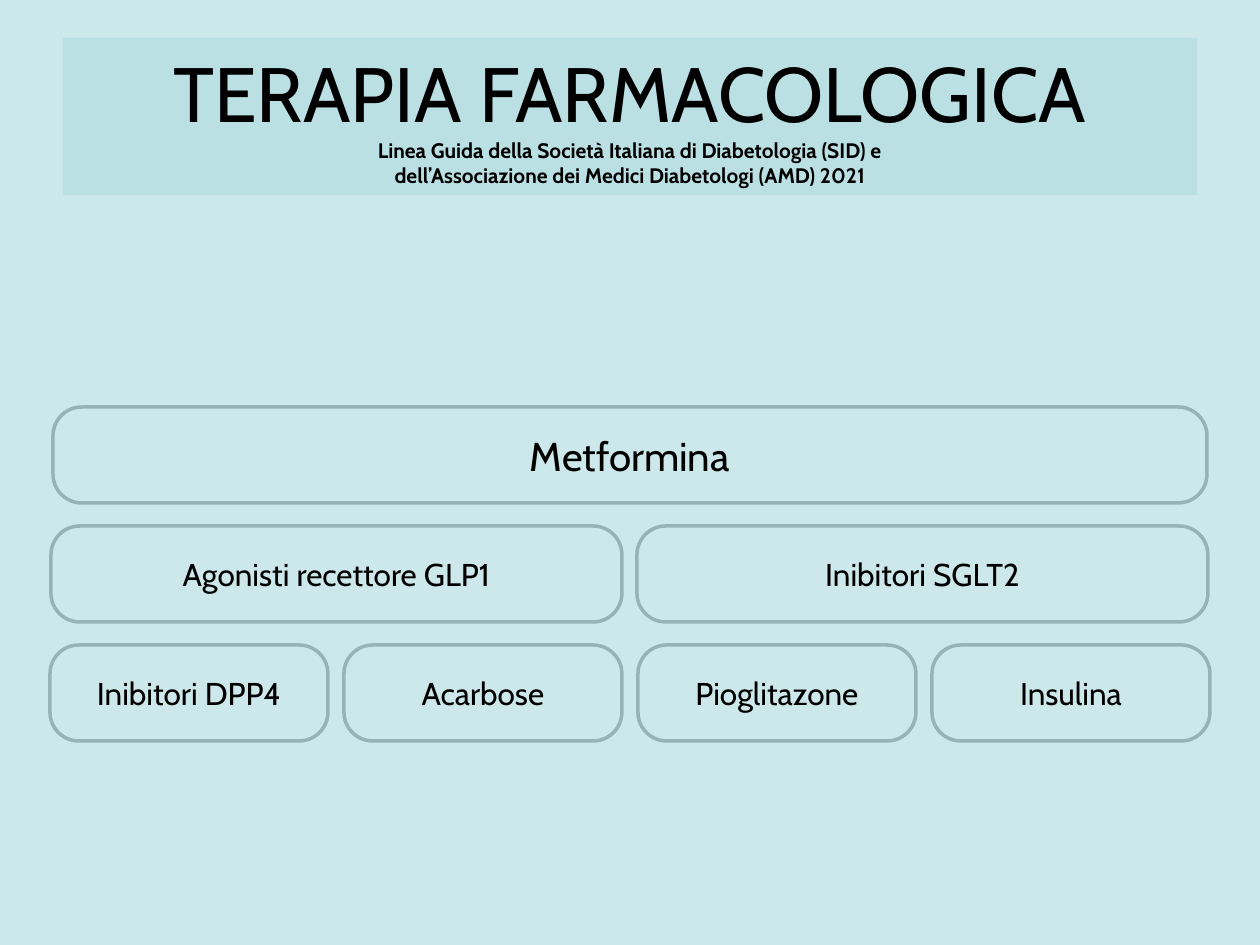
"""Build the drug therapy slide: a title band above three rows of rounded boxes."""
from copy import deepcopy

from pptx import Presentation
from pptx.dml.color import RGBColor
from pptx.enum.shapes import MSO_SHAPE
from pptx.enum.text import MSO_ANCHOR, PP_ALIGN
from pptx.util import Pt

TITLE = "TERAPIA FARMACOLOGICA"
SOURCE = [
    "Linea Guida della Società Italiana di Diabetologia (SID) e",
    "dell’Associazione dei Medici Diabetologi (AMD) 2021",
]
ROWS = [
    {"size": "first", "width": 1154, "gap": 0, "names": ["Metformina"]},
    {"size": "drug", "width": 571, "gap": 15,
     "names": ["Agonisti recettore GLP1", "Inibitori SGLT2"]},
    {"size": "drug", "width": 278, "gap": 16,
     "names": ["Inibitori DPP4", "Acarbose", "Pioglitazone", "Insulina"]},
]
THEME = {
    "font": "Cabin",
    "background": RGBColor.from_string("CCE8EA"),
    "band": RGBColor.from_string("BBE0E3"),
    "outline": RGBColor.from_string("96B3B6"),
    "text": RGBColor.from_string("000000"),
    "sizes": {"title": Pt(44), "source": Pt(12), "first": Pt(23), "drug": Pt(18)},
    "line": Pt(2),
}
PX = 914400 // 126
SLIDE_W, SLIDE_H = 1260, 945
BAND = (63, 38, 1134, 157)
ROW_TOP, ROW_PITCH, ROW_H = 407, 119, 96
CORNER = 0.3
INSET = 6


def add_box(s, kind, box, lines):
    sp = s.shapes.add_shape(kind, *(v * PX for v in box))
    sp.shadow.inherit = False
    tf = sp.text_frame
    frame = {"word_wrap": True, "vertical_anchor": MSO_ANCHOR.MIDDLE}
    frame.update({f"margin_{side}": INSET * PX
                  for side in ("left", "top", "right", "bottom")})
    for name, value in frame.items():
        setattr(tf, name, value)
    p = tf.paragraphs[0]
    p.alignment = PP_ALIGN.CENTER
    for i, (text, size, bold) in enumerate(lines):
        if i:
            p.add_line_break()
            p._p[-1].append(deepcopy(r._r.rPr))
        r = p.add_run()
        r.text = text
        font = {"name": THEME["font"], "size": THEME["sizes"][size], "bold": bold}
        for name, value in font.items():
            setattr(r.font, name, value)
        r.font.color.rgb = THEME["text"]
    return sp


def add_title(s):
    lines = [(TITLE, "title", False)] + [(text, "source", True) for text in SOURCE]
    sp = add_box(s, MSO_SHAPE.RECTANGLE, BAND, lines)
    sp.fill.solid()
    sp.fill.fore_color.rgb = THEME["band"]
    sp.line.fill.background()


def add_row(s, top, row):
    pitch = row["width"] + row["gap"]
    left = (SLIDE_W - pitch * len(row["names"]) + row["gap"]) // 2
    for i, name in enumerate(row["names"]):
        box = (left + i * pitch, top, row["width"], ROW_H)
        sp = add_box(s, MSO_SHAPE.ROUNDED_RECTANGLE, box, [(name, row["size"], False)])
        sp.adjustments[0] = CORNER
        sp.fill.background()
        sp.line.color.rgb = THEME["outline"]
        sp.line.width = THEME["line"]


def main():
    prs = Presentation()
    prs.slide_width, prs.slide_height = SLIDE_W * PX, SLIDE_H * PX
    s = prs.slides.add_slide(prs.slide_layouts[6])
    s.background.fill.solid()
    s.background.fill.fore_color.rgb = THEME["background"]
    add_title(s)
    for i, row in enumerate(ROWS):
        add_row(s, ROW_TOP + i * ROW_PITCH, row)
    prs.save("out.pptx")


if __name__ == "__main__":
    main()
